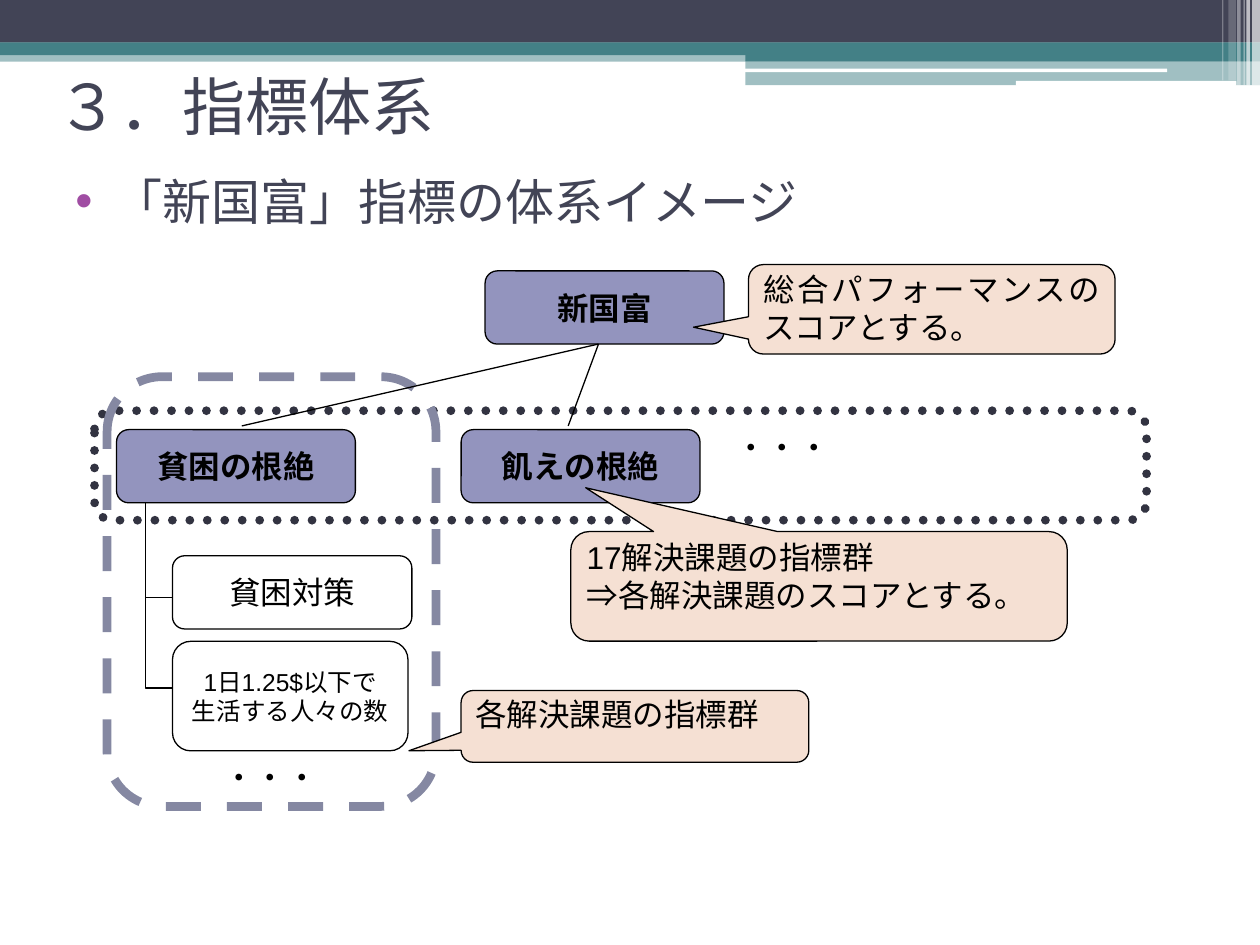
from lxml import etree
from pptx import Presentation
from pptx.dml.color import RGBColor
from pptx.enum import dml, shapes, text
from pptx.oxml.ns import qn
from pptx.util import Pt

NAVY, TEAL, WHITE, BLACK = "424456", "438086", "FFFFFF", "000000"
LILAC, PEACH = "9394BE", "F5E0D3"
RECT = shapes.MSO_SHAPE.RECTANGLE
ROUND = shapes.MSO_SHAPE.ROUNDED_RECTANGLE
CALLOUT = shapes.MSO_SHAPE.ROUNDED_RECTANGULAR_CALLOUT
CENTER, JUSTIFY = text.PP_ALIGN.CENTER, text.PP_ALIGN.JUSTIFY
TOP, MIDDLE = text.MSO_ANCHOR.TOP, text.MSO_ANCHOR.MIDDLE


def rgb(value):
    return RGBColor.from_string(value)


def box(kind, at, fill=None, line=None, weight=0.75, paras=(), size=18, bold=False,
        align=CENTER, anchor=MIDDLE, inset=6, font="Arial"):
    """Add a shape with optional text; a newline in a paragraph is a line break."""
    sp = s.shapes.add_shape(kind, *map(Pt, at))
    sp.shadow.inherit = False
    if fill:
        sp.fill.solid()
        sp.fill.fore_color.rgb = rgb(fill)
    else:
        sp.fill.background()
    if line:
        sp.line.color.rgb = rgb(line)
        sp.line.width = Pt(weight)
    else:
        sp.line.fill.background()
    tf = sp.text_frame
    tf.word_wrap = True
    tf.vertical_anchor = anchor
    tf.margin_left = tf.margin_right = Pt(inset)
    tf.margin_top = tf.margin_bottom = Pt(0.7)
    for i, para in enumerate(paras):
        p = tf.add_paragraph() if i else tf.paragraphs[0]
        p.alignment = align
        for j, part in enumerate(para.split("\n")):
            if j:
                p.add_line_break()
            r = p.add_run()
            r.text = part
            r.font.size, r.font.bold, r.font.name = Pt(size), bold, font
            r.font.color.rgb = rgb(BLACK)
    return sp


prs = Presentation()
prs.slide_width, prs.slide_height = Pt(720), Pt(540)
s = prs.slides.add_slide(prs.slide_layouts[6])

# Header bands and stripes: kind, position, colour, opacity in percent
for kind, at, color, opacity in [
    (RECT, (0, 28.8, 720, 6.5), TEAL, 50),
    (RECT, (0, 0, 720, 24.4), NAVY, 100),
    (RECT, (0, 24.3, 720, 7.2), TEAL, 100),
    (RECT, (426, 28, 294, 7), TEAL, 100),
    (RECT, (426, 34.7, 294, 14), TEAL, 50),
    (ROUND, (425.5, 39.2, 241.5, 2), WHITE, 100),
    (ROUND, (580.5, 46.2, 126, 2.8), WHITE, 100),
    (RECT, (715.5, 0, 4.5, 49), WHITE, 65),
    (RECT, (712.2, 0, 2, 49), WHITE, 65),
    (RECT, (710.6, 0, 0.7, 49), WHITE, 60),
    (RECT, (707, 0, 2, 49), WHITE, 40),
    (RECT, (702, 0, 4.3, 46), WHITE, 20),
    (RECT, (698.4, 0, 0.7, 46), WHITE, 30),
]:
    sp = box(kind, at, color)
    if opacity < 100:
        clr = sp._element.spPr.find(qn("a:solidFill")).find(qn("a:srgbClr"))
        etree.SubElement(clr, qn("a:alpha"), val=str(opacity * 1000))

# Title and bullet
for words, at, size, anchor, bullet in [
    ("３．指標体系", (25.2, 37.4, 648, 45.4), 36, MIDDLE, None),
    ("「新国富」指標の体系イメージ", (36, 94.3, 648, 423.4), 28, TOP, "•"),
]:
    tf = s.shapes.add_textbox(*map(Pt, at)).text_frame
    tf.word_wrap = True
    tf.vertical_anchor = anchor
    p = tf.paragraphs[0]
    if bullet:
        pPr = p._p.get_or_add_pPr()
        pPr.set("marL", str(Pt(22)))
        pPr.set("indent", str(-Pt(22)))
        buClr = etree.SubElement(pPr, qn("a:buClr"))
        etree.SubElement(buClr, qn("a:srgbClr"), val="A04DA3")
        etree.SubElement(pPr, qn("a:buFont"), typeface="Arial")
        etree.SubElement(pPr, qn("a:buChar"), char=bullet)
    r = p.add_run()
    r.text = words
    r.font.size, r.font.name = Pt(size), "Karla"
    r.font.color.rgb = rgb(NAVY)

# Goals and their indicators
for words, x, y in [("新国富", 277.2, 154.8), ("貧困の根絶", 66.6, 245.5),
                    ("飢えの根絶", 263.5, 245.5)]:
    box(ROUND, (x, y, 136.5, 41.8), LILAC, BLACK, paras=[words], bold=True)
dots = dict(paras=["・・・"], align=JUSTIFY, anchor=TOP, font="TeX Gyre Schola")
box(RECT, (414, 244, 85.7, 41.8), WHITE, **dots)
box(ROUND, (98.6, 317.6, 136.8, 41.8), WHITE, BLACK, paras=["貧困対策"])
box(ROUND, (98.6, 366.5, 134.6, 62.6), WHITE, BLACK,
    paras=["1日1.25$以下で\n生活する人々の数"], size=14, inset=3)

# Elbows drop from the goal, then turn right into each indicator
links = []
trunk_x, trunk_y, run = 83, 287.3, 15.6
for end_y in (341.3, 393.2):
    drop = end_y - trunk_y
    left, top = trunk_x + (run - drop) / 2, trunk_y + (drop - run) / 2
    cn = s.shapes.add_connector(shapes.MSO_CONNECTOR.ELBOW, Pt(left), Pt(top),
                                Pt(left + drop), Pt(top + run))
    xfrm = cn._element.spPr.find(qn("a:xfrm"))
    xfrm.set("rot", str(270 * 60000))
    xfrm.set("flipH", "1")
    geom = cn._element.spPr.find(qn("a:prstGeom"))
    av = geom.find(qn("a:avLst"))
    if av is None:
        av = etree.SubElement(geom, qn("a:avLst"))
    etree.SubElement(av, qn("a:gd"), name="adj1", fmla="val 100000")
    links.append(cn)

# Frames around the goal row and the first goal's column
row = box(ROUND, (54, 234.7, 601.2, 62.6), line="323341", weight=5)
row.line.dash_style = dml.MSO_LINE.ROUND_DOT
row._element.spPr.find(qn("a:ln")).set("cap", "rnd")
box(RECT, (121.7, 432.7, 85.7, 41.8), **dots)
column = box(ROUND, (61.2, 215.3, 187.9, 245.5), line="8588A2", weight=5)
column.line.dash_style = dml.MSO_LINE.DASH

for x1, x2 in [(342, 324.7), (342, 138.2)]:
    links.append(s.shapes.add_connector(shapes.MSO_CONNECTOR.STRAIGHT,
                                        Pt(x1), Pt(196.6), Pt(x2), Pt(243.4)))
for cn in links:
    cn.line.color.rgb = rgb(BLACK)
    cn.line.width = Pt(0.75)
    etree.SubElement(cn._element.spPr, qn("a:effectLst"))

# Callouts: position, pointer tip as a share of the size, paragraphs
for at, tip, paras in [
    ((263.5, 394.6, 198.7, 41), (-0.65, 0.34), ["各解決課題の指標群"]),
    ((427.7, 151.2, 209.5, 51.1), (-0.65, 0.2), ["総合パフォーマンスのスコアとする。"]),
    ((326.2, 303.8, 283.7, 62.6), (-0.47, -0.9),
     ["17解決課題の指標群", "⇒各解決課題のスコアとする。"]),
]:
    sp = box(CALLOUT, at, PEACH, BLACK, paras=paras, align=JUSTIFY, anchor=TOP)
    sp.adjustments[0], sp.adjustments[1] = tip

prs.save("out.pptx")
